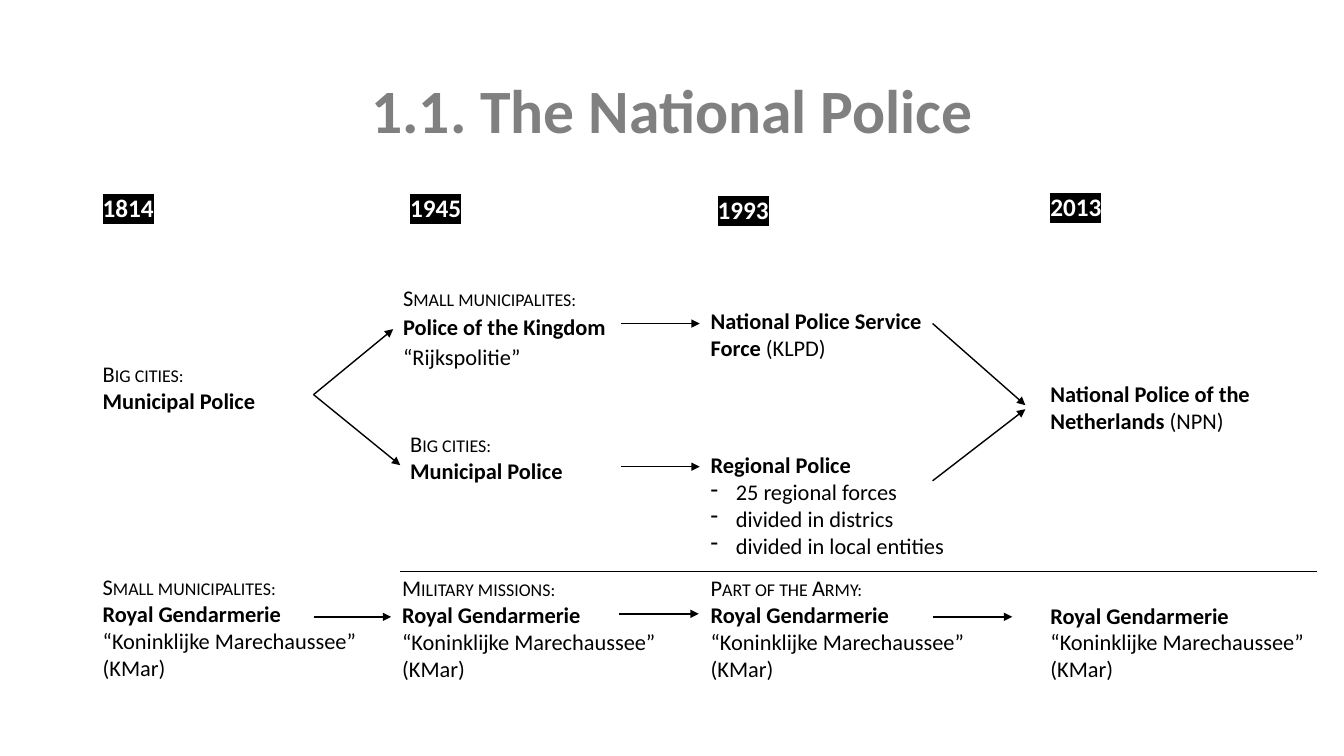
from pptx import Presentation
from pptx.dml.color import RGBColor
from pptx.enum import shapes, text
from pptx.oxml.ns import qn
from pptx.util import Pt
from lxml import etree

PX = 9144  # 100 px to the inch
THEME = {
    "font": "Calibri", "ink": "000000", "title_ink": "808080", "year_ink": "FFFFFF",
    "title": 44, "year": 18, "body": 16, "line": 1,
}


def add_run(p, words, size, ink, bold=False, small_caps=False):
    r = p.add_run()
    r.text = words
    for key, value in {"name": THEME["font"], "size": Pt(size), "bold": bold}.items():
        setattr(r.font, key, value)
    r.font.color.rgb = RGBColor.from_string(ink)
    if small_caps:
        r.font._element.set("cap", "small")
    return r


def add_box(at, wrap=True):
    sp = slide.shapes.add_textbox(*(v * PX for v in at))
    sp.text_frame.word_wrap = wrap
    return sp


prs = Presentation()
prs.slide_width, prs.slide_height = 1333 * PX, 750 * PX
slide = prs.slides.add_slide(prs.slide_layouts[5])

# Title
title = slide.shapes.title
for key, value in zip(("left", "top", "width", "height"), (92, 40, 1150, 145)):
    setattr(title, key, value * PX)
tf = title.text_frame
tf.vertical_anchor = text.MSO_ANCHOR.MIDDLE
p = tf.paragraphs[0]
p.alignment = text.PP_ALIGN.CENTER
p.line_spacing = 0.9
add_run(p, "1.1. The National Police", THEME["title"], THEME["title_ink"], bold=True)

# Years
for year, left, top in (("1814", 92, 186), ("1945", 397, 186), ("1993", 702, 188), ("2013", 1032, 185)):
    tf = add_box((left, top, 71, 40), wrap=False).text_frame
    tf.auto_size = text.MSO_AUTO_SIZE.SHAPE_TO_FIT_TEXT
    r = add_run(tf.paragraphs[0], year, THEME["year"], THEME["year_ink"], bold=True)
    highlight = etree.Element(qn("a:highlight"))
    etree.SubElement(highlight, qn("a:srgbClr"), val=THEME["ink"])
    r.font._element.find(qn("a:solidFill")).addnext(highlight)

# Police bodies: each paragraph is a list of (style, words)
GENDARMERIE = [[("bold", "Royal Gendarmerie")], [("plain", "“Koninklijke Marechaussee” (KMar)")]]
SMALL = [("caps", "Small municipalites:")]
MUNICIPAL = [[("caps", "Big cities:")], [("bold", "Municipal Police")]]
BODIES = {
    "gendarmerie 1814": ((92, 564, 305, 145), [SMALL] + GENDARMERIE),
    "municipal 1814": ((92, 352, 219, 79), MUNICIPAL),
    "kingdom 1945": ((390, 274, 305, 105),
                     [SMALL, [("bold", "Police of the Kingdom")], [("plain", "“Rijkspolitie”")]]),
    "gendarmerie 1945": ((389, 565, 305, 145), [[("caps", "Military missions:")]] + GENDARMERIE),
    "municipal 1945": ((397, 422, 220, 79), MUNICIPAL),
    "regional 1993": ((695, 443, 305, 165),
                      [[("bold", "Regional Police")], [("bullet", "25 regional forces")],
                       [("bullet", "divided in districs")], [("bullet", "divided in local entities")]]),
    "service 1993": ((695, 300, 305, 102),
                     [[("bold", "National Police Service")], [("bold", "Force "), ("plain", "(KLPD)")]]),
    "gendarmerie 1993": ((695, 565, 305, 145), [[("caps", "Part of the Army:")]] + GENDARMERIE),
    "national 2013": ((1032, 372, 305, 81),
                      [[("bold", "National Police of the Netherlands "), ("plain", "(NPN)")]]),
    "gendarmerie 2013": ((1032, 592, 305, 118), GENDARMERIE),
}
boxes = {}
for name, (at, paragraphs) in BODIES.items():
    boxes[name] = add_box(at)
    tf = boxes[name].text_frame
    for i, runs in enumerate(paragraphs):
        p = tf.add_paragraph() if i else tf.paragraphs[0]
        if name == "kingdom 1945":
            p.line_spacing = 1.1
        for style, words in runs:
            if style == "bullet":
                pPr = p._p.get_or_add_pPr()
                pPr.set("marL", str(25 * PX))
                pPr.set("indent", str(-25 * PX))
                etree.SubElement(pPr, qn("a:buChar"), char="-")
            add_run(p, words, THEME["body"], THEME["ink"], style == "bold", style == "caps")

# Arrows, with the boxes they join, and the dividing line
LINES = [
    ((311, 392, 390, 326), "municipal 1814", "kingdom 1945"),
    ((311, 392, 397, 462), "municipal 1814", "municipal 1945"),
    ((311, 612, 388, 612), None, None),
    ((616, 321, 694, 321), None, None),
    ((616, 463, 694, 463), None, None),
    ((614, 609, 693, 609), None, None),
    ((925, 477, 1017, 406), None, None),
    ((925, 321, 1017, 402), None, None),
    ((925, 612, 1004, 612), None, None),
]
DIVIDER = ((397, 567, 1306, 567), None, None)
for line in LINES + [DIVIDER]:
    ends, source, target = line
    cxn = slide.shapes.add_connector(shapes.MSO_CONNECTOR.STRAIGHT, *(v * PX for v in ends))
    if source:
        cxn.begin_connect(boxes[source], 3)
        cxn.end_connect(boxes[target], 1)
    cxn.line.width = Pt(THEME["line"])
    cxn.line.color.rgb = RGBColor.from_string(THEME["ink"])
    if line is not DIVIDER:
        etree.SubElement(cxn.line._get_or_add_ln(), qn("a:tailEnd"), type="triangle")
    etree.SubElement(cxn._element.spPr, qn("a:effectLst"))

prs.save("out.pptx")
